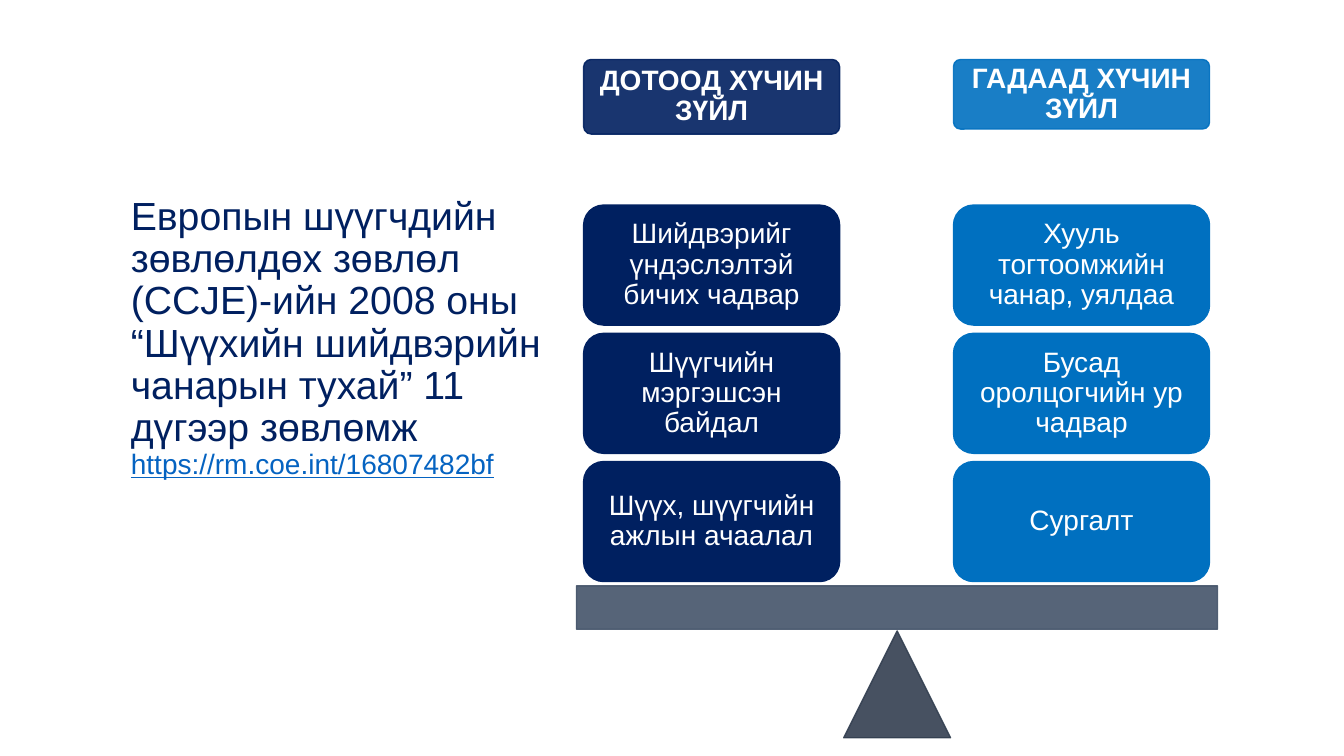
from pptx import Presentation
from pptx.dml.color import RGBColor
from pptx.enum.shapes import MSO_SHAPE as Shape
from pptx.enum.text import MSO_ANCHOR as Anchor, PP_ALIGN as Align
from pptx.oxml.ns import qn
from pptx.util import Pt
from lxml.etree import SubElement

NAVY, BLUE, WHITE = "002060", "0070C0", "FFFFFF"
BEAM, PIVOT, LINK = "44546A", "333F50", "0563C1"


def color(hex_string):
    return RGBColor.from_string(hex_string)


class SlideBuilder:
    font = "Arial"
    line_spacing = 0.9

    def __init__(self, slide):
        self.slide = slide

    def run(self, paragraph, text, size, hex_color, bold=False, underline=False):
        run = paragraph.add_run()
        run.text = text
        run.font.name = self.font
        run.font.size = Pt(size)
        run.font.bold = bold
        run.font.underline = underline
        run.font.color.rgb = color(hex_color)

    def frame(self, shape, align, inset_x, inset_y):
        frame = shape.text_frame
        frame.word_wrap = True
        frame.vertical_anchor = Anchor.MIDDLE
        frame.margin_left = frame.margin_right = Pt(inset_x)
        frame.margin_top = frame.margin_bottom = Pt(inset_y)
        paragraph = frame.paragraphs[0]
        paragraph.alignment = align
        paragraph.line_spacing = self.line_spacing
        return paragraph

    def shape(self, kind, left, top, width, height, hex_color, opacity=100):
        shape = self.slide.shapes.add_shape(kind, Pt(left), Pt(top), Pt(width), Pt(height))
        shape.shadow.inherit = False
        shape.fill.solid()
        shape.fill.fore_color.rgb = color(hex_color)
        shape.line.color.rgb = color(hex_color)
        shape.line.width = Pt(1)
        if opacity < 100:
            for solid in shape.element.spPr.iter(qn("a:srgbClr")):
                SubElement(solid, qn("a:alpha"), val=str(opacity * 1000))
        return shape

    def box(self, text, left, top, width, height, hex_color, inset,
            opacity=100, corner=0.1667, bold=False):
        shape = self.shape(Shape.ROUNDED_RECTANGLE, left, top, width, height, hex_color, opacity)
        shape.adjustments[0] = corner
        paragraph = self.frame(shape, Align.CENTER, inset, inset)
        self.run(paragraph, text, 20, WHITE, bold)

    def text(self, left, top, width, height):
        shape = self.slide.shapes.add_textbox(Pt(left), Pt(top), Pt(width), Pt(height))
        return self.frame(shape, Align.LEFT, 7.2, 3.6)


def main():
    presentation = Presentation()
    presentation.slide_width, presentation.slide_height = Pt(960), Pt(540)
    builder = SlideBuilder(presentation.slides.add_slide(presentation.slide_layouts[6]))

    # Source of the recommendation
    paragraph = builder.text(86.4, 138.6, 310.3, 206)
    builder.run(paragraph, "Европын шүүгчдийн зөвлөлдөх зөвлөл (CCJE)-ийн 2008 оны "
                "“Шүүхийн шийдвэрийн чанарын тухай” 11 дүгээр зөвлөмж", 28, NAVY)
    paragraph.add_line_break()
    builder.run(paragraph, "https://rm.coe.int/16807482bf", 20, LINK, underline=True)

    # Scale: pivot and beam
    builder.shape(Shape.ISOSCELES_TRIANGLE, 607.2 - 4.5, 450.7, 76.3, 76.3, PIVOT, 90)
    builder.shape(Shape.RECTANGLE, 411.8, 418.5, 457.9, 31, BEAM, 90)

    # Two weighed columns: heading and three cards each
    columns = [
        (416.9, 53.3, NAVY, "ДОТООД ХҮЧИН ЗҮЙЛ",
         ["Шийдвэрийг үндэслэлтэй бичих чадвар", "Шүүгчийн мэргэшсэн байдал",
          "Шүүх, шүүгчийн ажлын ачаалал"]),
        (681.1, 49.7, BLUE, "ГАДААД ХҮЧИН ЗҮЙЛ",
         ["Хууль тогтоомжийн чанар, уялдаа", "Бусад оролцогчийн ур чадвар",
          "Сургалт"]),
    ]
    width, card_top, card_height, card_pitch = 182.9, 146.5, 85.7, 91.6
    for left, heading_height, hex_color, heading, cards in columns:
        builder.box(heading, left, 42.5, width, heading_height, hex_color, 7,
                    opacity=90, corner=0.1, bold=True)
        for row, card in enumerate(cards):
            builder.box(card, left, card_top + row * card_pitch, width, card_height,
                        hex_color, 6)

    presentation.save("out.pptx")


if __name__ == "__main__":
    main()
